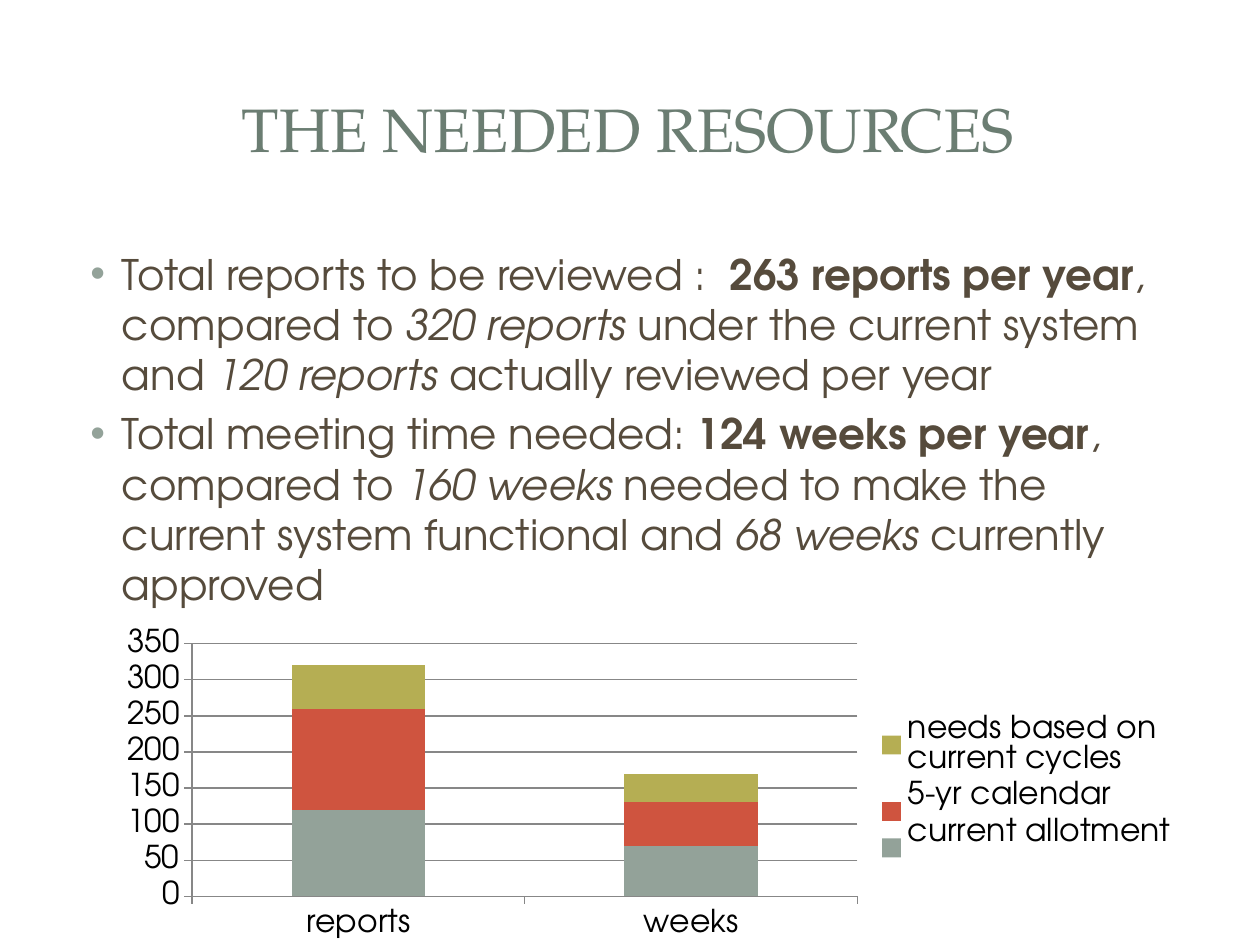
import pptx
import pptx.chart.data
import pptx.dml.color
import pptx.enum.chart
import pptx.enum.shapes
import pptx.enum.text
import pptx.oxml
import pptx.oxml.ns
import pptx.util
from pptx.util import Inches

COLORS = {
    "panel": "FFFFFF",
    "title": "6B7D72",
    "body": "564B3C",
    "bullet": "93A299",
    "axis": "878787",
    "chart_text": "000000",
}
HEADING_FONT = "TeX Gyre Pagella"
BODY_FONT = "TeX Gyre Adventor"

FINDINGS = [
    [
        ("Total reports to be reviewed :  ", ""),
        ("263 reports per year", "bold"),
        (", compared to ", ""),
        ("320 reports ", "italic"),
        ("under the current system and ", ""),
        ("120 reports ", "italic"),
        ("actually reviewed per year", ""),
    ],
    [
        ("Total meeting time needed: ", ""),
        ("124 weeks per year", "bold"),
        (", compared to ", ""),
        ("160 weeks ", "italic"),
        ("needed to make the current system functional and ", ""),
        ("68 weeks ", "italic"),
        ("currently approved", ""),
    ],
]
CATEGORIES = ["reports", "weeks"]
SERIES = [
    ("current allotment", (120, 70), "93A299"),
    ("5-yr calendar", (140, 60), "CF543F"),
    ("needs based on current cycles", (60, 40), "B5AE53"),
]


def rgb(name):
    return pptx.dml.color.RGBColor.from_string(COLORS.get(name, name))


def style_font(font, face, size, color):
    font.name = face
    font.size = pptx.util.Pt(size)
    font.color.rgb = rgb(color)


def add_panel(slide, box, kind, opacity=100):
    panel = slide.shapes.add_shape(kind, *box)
    panel.shadow.inherit = False
    panel.line.fill.background()
    panel.fill.solid()
    panel.fill.fore_color.rgb = rgb("panel")
    if opacity < 100:
        color = panel._element.spPr.find(".//" + pptx.oxml.ns.qn("a:srgbClr"))
        color.append(pptx.oxml.parse_xml(
            f'<a:alpha {pptx.oxml.ns.nsdecls("a")} val="{opacity * 1000}"/>'
        ))
    return panel


def add_backdrop(slide, box):
    left, top, width, height = box
    shapes = pptx.enum.shapes.MSO_SHAPE
    page = add_panel(slide, box, shapes.ROUNDED_RECTANGLE)
    page.adjustments[0] = 0.02
    band = (left + Inches(0.2), top + Inches(0.19), width - Inches(0.4), Inches(1.45))
    add_panel(slide, band, shapes.RECTANGLE, opacity=83)
    plate = (left + Inches(0.31), top + Inches(0.3), width - Inches(0.63), Inches(1.22))
    add_panel(slide, plate, shapes.RECTANGLE)


def add_text_frame(slide, box):
    frame = slide.shapes.add_textbox(*box).text_frame
    frame.word_wrap = True
    return frame


def add_bullet(paragraph):
    properties = paragraph._p.get_or_add_pPr()
    properties.set("marL", str(Inches(0.37)))
    properties.set("indent", str(Inches(-0.25)))
    namespace = pptx.oxml.ns.nsdecls("a")
    for markup in (
        f'<a:buClr {namespace}><a:srgbClr val="{COLORS["bullet"]}"/></a:buClr>',
        f'<a:buFont {namespace} typeface="Arial"/>',
        f'<a:buChar {namespace} char="•"/>',
    ):
        properties.append(pptx.oxml.parse_xml(markup))


def add_title(slide, box):
    frame = add_text_frame(slide, box)
    frame.vertical_anchor = pptx.enum.text.MSO_ANCHOR.MIDDLE
    heading = frame.paragraphs[0]
    heading.alignment = pptx.enum.text.PP_ALIGN.CENTER
    run = heading.add_run()
    run.text = "THE NEEDED RESOURCES"
    style_font(run.font, HEADING_FONT, 35, "title")


def add_findings(slide, box):
    frame = add_text_frame(slide, box)
    for index, finding in enumerate(FINDINGS):
        paragraph = frame.add_paragraph() if index else frame.paragraphs[0]
        paragraph.space_before = pptx.util.Pt(4.8)
        add_bullet(paragraph)
        for text, emphasis in finding:
            run = paragraph.add_run()
            run.text = text
            style_font(run.font, BODY_FONT, 24, "body")
            run.font.bold = emphasis == "bold"
            run.font.italic = emphasis == "italic"


def set_layout(region, position, fractions, inner=False):
    for previous in region.findall(pptx.oxml.ns.qn("c:layout")):
        region.remove(previous)
    target = '<c:layoutTarget val="inner"/>' if inner else ""
    modes = "".join(f'<c:{axis}Mode val="edge"/>' for axis in "xy")
    sizes = "".join(
        f'<c:{side} val="{value}"/>' for side, value in zip("xywh", fractions)
    )
    region.insert(position, pptx.oxml.parse_xml(
        f'<c:layout {pptx.oxml.ns.nsdecls("c")}><c:manualLayout>'
        f"{target}{modes}{sizes}</c:manualLayout></c:layout>"
    ))


def style_axis(axis):
    axis.major_tick_mark = pptx.enum.chart.XL_TICK_MARK.OUTSIDE
    axis.minor_tick_mark = pptx.enum.chart.XL_TICK_MARK.NONE
    axis.format.line.color.rgb = rgb("axis")
    axis.format.line.width = pptx.util.Pt(0.75)


def add_resource_chart(slide, box):
    data = pptx.chart.data.CategoryChartData()
    data.categories = CATEGORIES
    for name, values, _ in SERIES:
        data.add_series(name, values)
    chart = slide.shapes.add_chart(
        pptx.enum.chart.XL_CHART_TYPE.COLUMN_STACKED, *box, data
    ).chart
    style_font(chart.font, BODY_FONT, 18, "chart_text")
    chart.has_title = False

    columns = chart.plots[0]
    columns.gap_width = 150
    columns.overlap = 100
    columns.vary_by_categories = False
    for series, (_, _, color) in zip(columns.series, SERIES):
        series.format.fill.solid()
        series.format.fill.fore_color.rgb = rgb(color)

    style_axis(chart.category_axis)
    amounts = chart.value_axis
    style_axis(amounts)
    amounts.minimum_scale = 0
    amounts.maximum_scale = 350
    amounts.major_unit = 50
    amounts.has_major_gridlines = True
    amounts.major_gridlines.format.line.color.rgb = rgb("axis")
    amounts.major_gridlines.format.line.width = pptx.util.Pt(0.75)

    chart.has_legend = True
    chart.legend.position = pptx.enum.chart.XL_LEGEND_POSITION.RIGHT
    chart.legend.include_in_layout = False
    plot_area = chart.element.xpath("c:chart/c:plotArea")[0]
    legend = chart.element.xpath("c:chart/c:legend")[0]
    set_layout(plot_area, 0, (0.08, 0.07, 0.61, 0.78), inner=True)
    set_layout(legend, 1, (0.7, 0.27, 0.29, 0.45))


def main():
    deck = pptx.Presentation()
    deck.slide_width = Inches(10)
    deck.slide_height = Inches(7.5)
    slide = deck.slides.add_slide(deck.slide_layouts[6])
    add_backdrop(slide, [Inches(n) for n in (0.1, 0.11, 9.8, 7.29)])
    add_title(slide, [Inches(n) for n in (0.47, 0.45, 9.03, 1.14)])
    add_findings(slide, [Inches(n) for n in (0.5, 1.92, 9, 4.78)])
    add_resource_chart(slide, [Inches(n) for n in (0.83, 4.93, 8.66, 2.57)])
    deck.save("out.pptx")


if __name__ == "__main__":
    main()
